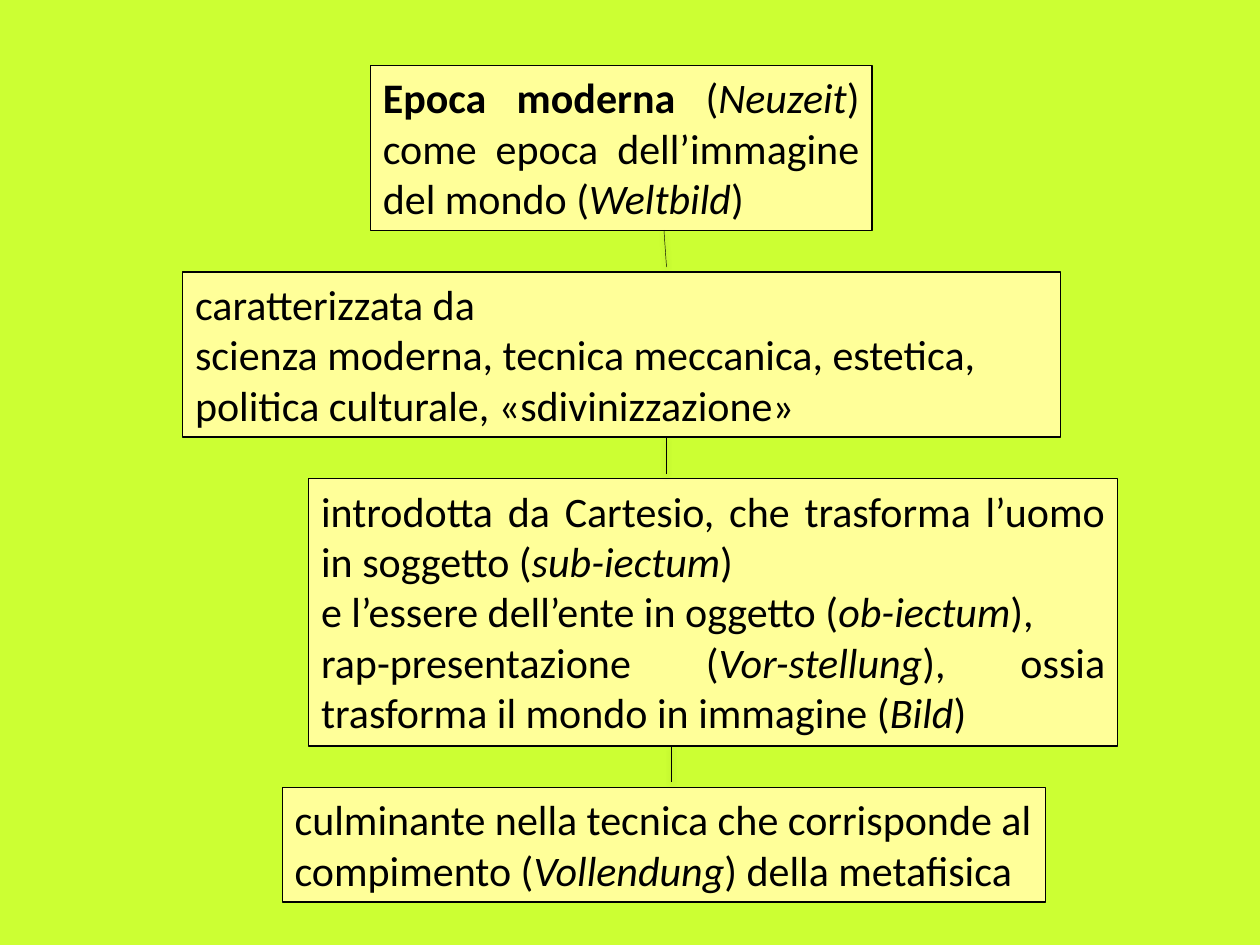
from lxml import etree
from pptx import Presentation
from pptx.dml.color import RGBColor
from pptx.enum import shapes, text
from pptx.oxml import ns
from pptx.util import Inches, Pt

LIME = RGBColor(0xCC, 0xFF, 0x33)
CREAM = RGBColor(0xFF, 0xFF, 0x99)
BLACK = RGBColor(0, 0, 0)

LEFT = text.PP_ALIGN.LEFT
JUSTIFY = text.PP_ALIGN.JUSTIFY
GAP_TO_NEXT = 0.04

# Left, top, width, height, alignment, paragraphs.
# A run is plain text or a pair of text and style.
STEPS = [
    (2.94, 0.52, 3.98, 1.31, JUSTIFY, [
        [("Epoca moderna ", "bold"), "(", ("Neuzeit", "italic"),
         ") come epoca dell’immagine del mondo (", ("Weltbild", "italic"), ")"],
    ]),
    (1.45, 2.16, 6.97, 1.31, LEFT, [
        ["caratterizzata da"],
        ["scienza moderna, tecnica meccanica, estetica, "
         "politica culturale, «sdivinizzazione»"],
    ]),
    (2.45, 3.8, 6.42, 2.12, JUSTIFY, [
        ["introdotta da Cartesio, che trasforma l’uomo in soggetto (",
         ("sub-iectum", "italic"), ")"],
        ["e l’essere dell’ente in oggetto (", ("ob-iectum", "italic"), "),"],
        ["rap-presentazione (", ("Vor-stellung", "italic"),
         "), ossia trasforma il mondo in immagine (", ("Bild", "italic"), ")"],
    ]),
    (2.24, 6.25, 6.06, 0.91, LEFT, [
        ["culminante nella tecnica che corrisponde al compimento (",
         ("Vollendung", "italic"), ") della metafisica"],
    ]),
]

# Start and end x of the link below each step but the last
LINK_XS = [(5.27, 5.29), (5.29, 5.29), (5.33, 5.33)]


def add_run(paragraph, content):
    words, style = (content, None) if isinstance(content, str) else content
    run = paragraph.add_run()
    run.text = words
    formats = {"name": "Calibri", "size": Pt(24),
               "bold": style == "bold", "italic": style == "italic"}
    for name, value in formats.items():
        setattr(run.font, name, value)
    run.font.color.rgb = BLACK


def add_step(slide, left, top, width, height, alignment, paragraphs):
    step = slide.shapes.add_shape(
        shapes.MSO_SHAPE.RECTANGLE,
        Inches(left), Inches(top), Inches(width), Inches(height))
    step.shadow.inherit = False
    step.fill.solid()
    step.fill.fore_color.rgb = CREAM
    step.line.color.rgb = BLACK
    step.line.width = Pt(0.75)

    frame = step.text_frame
    formats = {"word_wrap": True,
               "auto_size": text.MSO_AUTO_SIZE.SHAPE_TO_FIT_TEXT,
               "vertical_anchor": text.MSO_ANCHOR.TOP}
    for name, value in formats.items():
        setattr(frame, name, value)
    for index, runs in enumerate(paragraphs):
        paragraph = frame.add_paragraph() if index else frame.paragraphs[0]
        paragraph.alignment = alignment
        for content in runs:
            add_run(paragraph, content)


def add_soft_shadow(link):
    effects = etree.SubElement(link._element.spPr, ns.qn("a:effectLst"))
    shadow = etree.SubElement(
        effects, ns.qn("a:outerShdw"), blurRad=str(Pt(3.1)),
        dist=str(Pt(1.6)), dir="5400000", rotWithShape="0")
    color = etree.SubElement(shadow, ns.qn("a:srgbClr"), val=str(BLACK))
    etree.SubElement(color, ns.qn("a:alpha"), val="38000")


def add_link(slide, start_x, start_y, end_x, end_y):
    link = slide.shapes.add_connector(
        shapes.MSO_CONNECTOR.STRAIGHT,
        Inches(start_x), Inches(start_y), Inches(end_x), Inches(end_y))
    link.line.color.rgb = BLACK
    link.line.width = Pt(0.25)
    add_soft_shadow(link)


def main():
    deck = Presentation()
    deck.slide_width, deck.slide_height = Inches(10), Inches(7.5)
    slide = deck.slides.add_slide(deck.slide_layouts[6])
    slide.background.fill.solid()
    slide.background.fill.fore_color.rgb = LIME

    for step in STEPS:
        add_step(slide, *step)
    for upper, lower, (start_x, end_x) in zip(STEPS, STEPS[1:], LINK_XS):
        bottom = upper[1] + upper[3]
        add_link(slide, start_x, bottom, end_x, lower[1] - GAP_TO_NEXT)
    deck.save("out.pptx")


if __name__ == "__main__":
    main()
